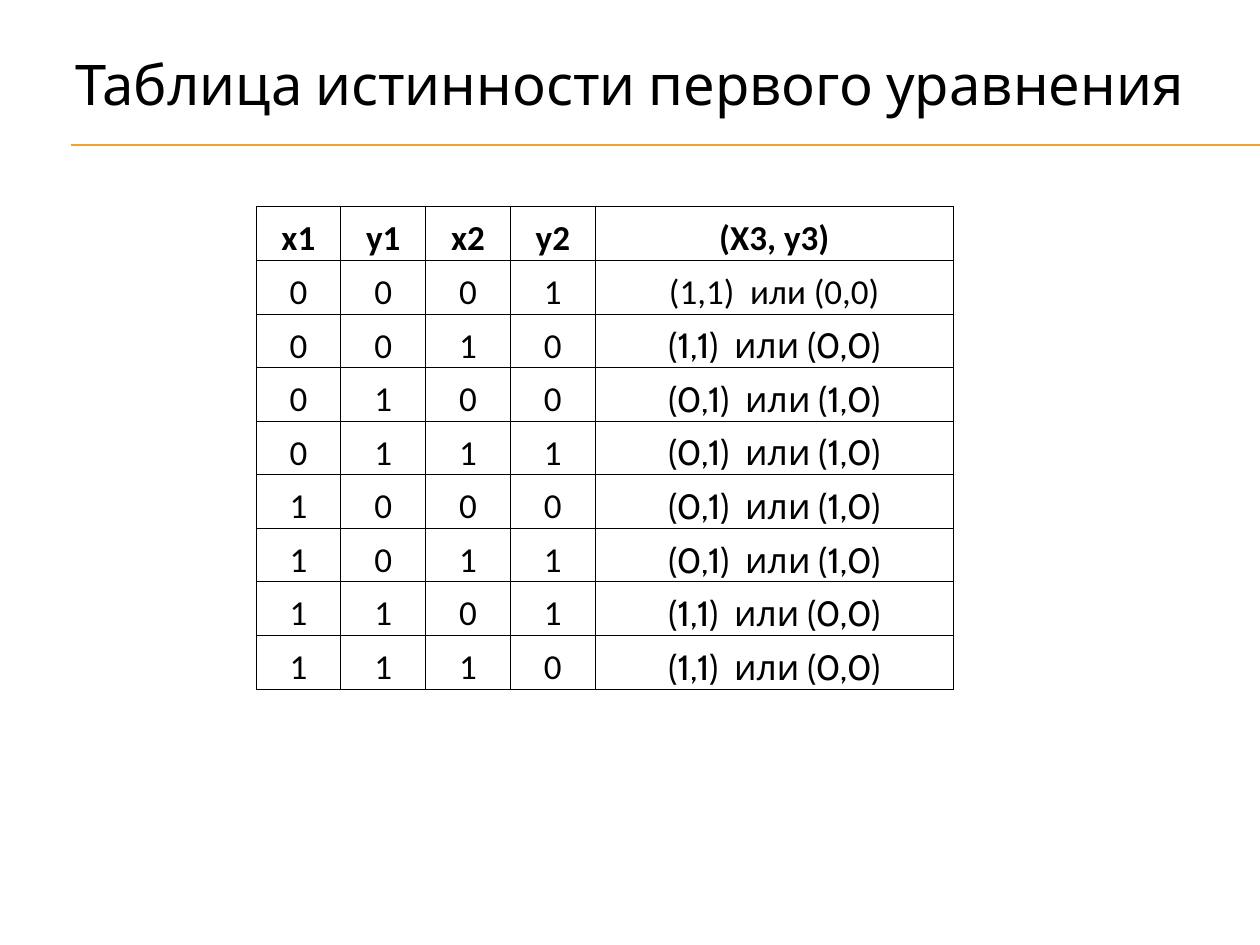
from dataclasses import dataclass
from itertools import product

from lxml import etree
from pptx import Presentation
from pptx import util as u
from pptx.dml import color
from pptx.enum import shapes, text
from pptx.oxml import ns

BLACK = "000000"
WHITE = "FFFFFF"
ORANGE = "F0A22E"
HEADINGS = ["x1", "y1", "x2", "y2", "(X3, y3)"]
COLUMN_WIDTHS = [1.71] * 4 + [7.22]
ROW_HEIGHT = 1.08


@dataclass
class Rule:
    left: float
    right: float
    top: float


@dataclass
class Entry:
    wording: str
    font: str = "Calibri"
    bold: bool = False


def rgb(value: str) -> color.RGBColor:
    return color.RGBColor.from_string(value)


def write(frame, entry: Entry, size: float) -> None:
    paragraph = frame.paragraphs[0]
    paragraph.alignment = text.PP_ALIGN.CENTER
    run = paragraph.add_run()
    run.text = entry.wording
    formats = {"name": entry.font, "size": u.Pt(size), "bold": entry.bold}
    for name, value in formats.items():
        setattr(run.font, name, value)
    run.font.color.rgb = rgb(BLACK)


def draw_rule(slide, rule: Rule) -> None:
    connector = slide.shapes.add_connector(
        shapes.MSO_CONNECTOR.STRAIGHT,
        u.Cm(rule.left), u.Cm(rule.top), u.Cm(rule.right), u.Cm(rule.top),
    )
    connector.line.color.rgb = rgb(ORANGE)
    connector.line.width = u.Pt(0.75)
    etree.SubElement(connector._element.spPr, ns.qn("a:effectLst"))


def draw_title(slide, wording: str) -> None:
    shape = slide.shapes.add_textbox(u.Cm(1.27), u.Cm(0.76), u.Cm(22.86), u.Cm(1.83))
    formats = {
        "word_wrap": True,
        "vertical_anchor": text.MSO_ANCHOR.MIDDLE,
        "margin_left": 0,
        "margin_right": 0,
    }
    for name, value in formats.items():
        setattr(shape.text_frame, name, value)
    write(shape.text_frame, Entry(wording, "Cabin"), 32)


def add_borders(cell) -> None:
    properties = cell._tc.get_or_add_tcPr()
    for side in ("lnL", "lnR", "lnT", "lnB"):
        border = etree.SubElement(properties, ns.qn(f"a:{side}"), w=str(u.Pt(0.5)))
        fill = etree.SubElement(border, ns.qn("a:solidFill"))
        etree.SubElement(fill, ns.qn("a:srgbClr"), val=BLACK)


def draw_cell(cell, entry: Entry) -> None:
    formats = {
        "vertical_anchor": text.MSO_ANCHOR.BOTTOM,
        "margin_left": u.Cm(0.03),
        "margin_right": u.Cm(0.03),
        "margin_top": u.Cm(0.03),
        "margin_bottom": 0,
    }
    for name, value in formats.items():
        setattr(cell, name, value)
    add_borders(cell)
    cell.fill.solid()
    cell.fill.fore_color.rgb = rgb(WHITE)
    write(cell.text_frame, entry, 20)


def truth_rows() -> list[list[Entry]]:
    rows = [[Entry(heading, bold=True) for heading in HEADINGS]]
    for x1, y1, x2 in product((0, 1), repeat=3):
        y2 = 1 - (x1 ^ y1 ^ x2)
        pairs = "(1,1)  или (0,0)" if x1 == y1 else "(0,1)  или (1,0)"
        font = "Calibri" if len(rows) == 1 else "Cabin"
        rows.append([Entry(str(bit)) for bit in (x1, y1, x2, y2)] + [Entry(pairs, font)])
    return rows


def draw_table(slide, rows: list[list[Entry]]) -> None:
    table = slide.shapes.add_table(
        len(rows), len(COLUMN_WIDTHS), u.Cm(5.16), u.Cm(4.17),
        u.Cm(sum(COLUMN_WIDTHS)), u.Cm(ROW_HEIGHT * len(rows)),
    ).table
    table.first_row = False
    table.horz_banding = False
    for column, width in zip(table.columns, COLUMN_WIDTHS):
        column.width = u.Cm(width)
    for row, entries in zip(table.rows, rows):
        row.height = u.Cm(ROW_HEIGHT)
        for cell, entry in zip(row.cells, entries):
            draw_cell(cell, entry)


def main() -> None:
    presentation = Presentation()
    presentation.slide_width = u.Cm(25.4)
    presentation.slide_height = u.Cm(19.05)
    slide = presentation.slides.add_slide(presentation.slide_layouts[6])
    slide.background.fill.solid()
    slide.background.fill.fore_color.rgb = rgb(WHITE)
    for rule in (Rule(1.43, 25.4, 2.92), Rule(1.43, 25.4, 2.94)):
        draw_rule(slide, rule)
    draw_table(slide, truth_rows())
    draw_title(slide, "Таблица истинности первого уравнения")
    presentation.save("out.pptx")


if __name__ == "__main__":
    main()
